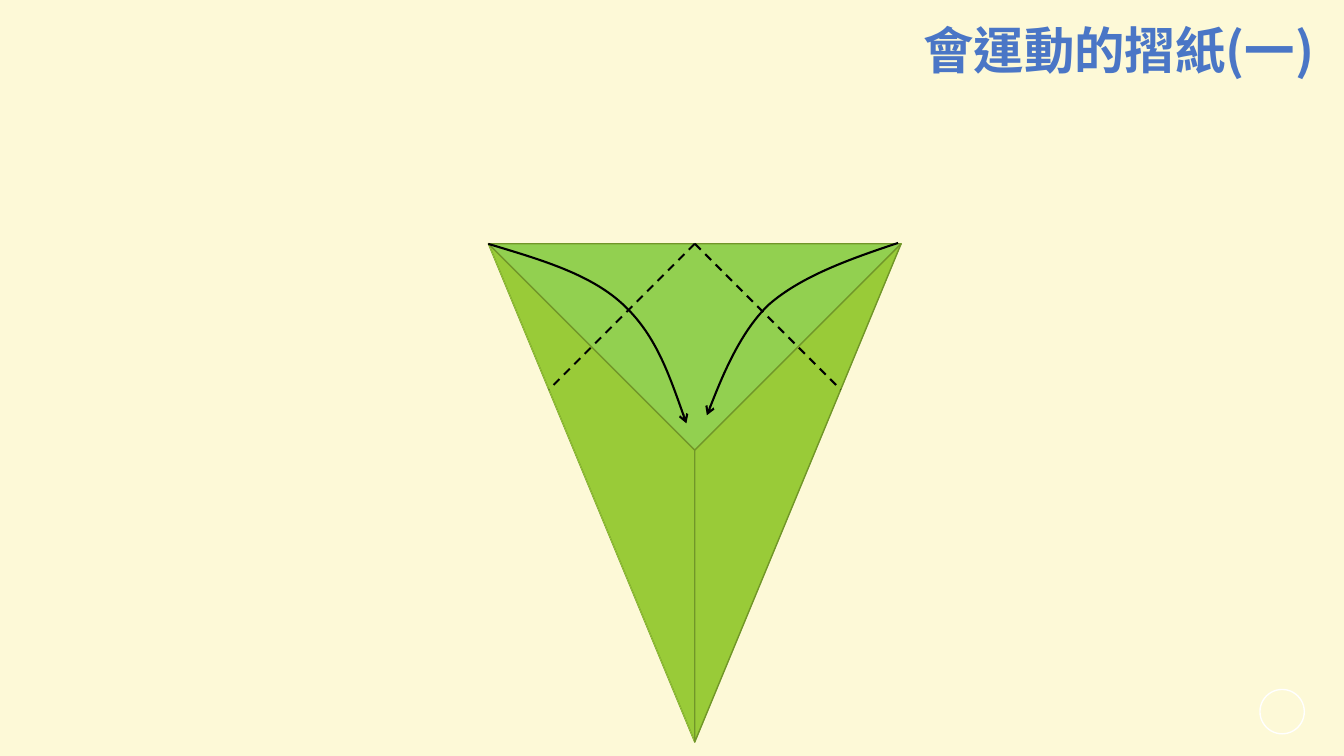
from lxml import etree
from pptx import Presentation
from pptx.dml.color import RGBColor
from pptx.enum.dml import MSO_LINE
from pptx.enum.lang import MSO_LANGUAGE_ID
from pptx.enum.shapes import MSO_CONNECTOR, MSO_SHAPE
from pptx.enum.text import MSO_ANCHOR, MSO_AUTO_SIZE, PP_ALIGN
from pptx.oxml.ns import qn
from pptx.util import Pt

STRAIGHT = MSO_CONNECTOR.STRAIGHT
OVAL = MSO_SHAPE.OVAL
DASH = MSO_LINE.DASH
LEFT = PP_ALIGN.LEFT
TOP = MSO_ANCHOR.TOP
GROW = MSO_AUTO_SIZE.SHAPE_TO_FIT_TEXT
CHINESE = MSO_LANGUAGE_ID.TRADITIONAL_CHINESE

TITLE = "會運動的摺紙(一)"
FONT = "Noto Sans CJK SC"
BACKGROUND, TITLE_BLUE, WHITE, BLACK = "FDF9D7", "4A76C6", "FFFFFF", "000000"
PAPER, FLAP, EDGE = "99CB38", "92D050", "719629"

CENTER_X, TOP_Y, BOTTOM_Y = 496.3, 174.1, 530
HALF_WIDTH = 147.4
FOLD_REACH = 104.2

MIDDLE = (CENTER_X, TOP_Y)
LEFT_CORNER = (CENTER_X - HALF_WIDTH, TOP_Y)
RIGHT_CORNER = (CENTER_X + HALF_WIDTH, TOP_Y)
TIP = (CENTER_X, BOTTOM_Y)
FLAP_TIP = (CENTER_X, TOP_Y + HALF_WIDTH)

FOLD_ARROWS = [
    [(348.8, 174.2), (384.5, 185), (420.5, 195.1), (444.2, 216.7),
     (468, 238.3), (478.8, 270), (490.3, 302.4)],
    [(641.5, 173.5), (607, 185), (572.4, 197.3), (549.4, 217.4),
     (527, 238.3), (504.9, 296.6), (504.9, 296.6)],
]


def color(value):
    return RGBColor.from_string(value)


def style_line(shape, value, width, dash=None):
    shape.line.color.rgb = color(value)
    shape.line.width = Pt(width)
    if dash:
        shape.line.dash_style = dash


def write_text(shape, text, *, size, fill, bold=False, spacing=1.0):
    frame = shape.text_frame
    frame.word_wrap = True
    frame.auto_size = GROW
    frame.vertical_anchor = TOP
    paragraph = frame.paragraphs[0]
    paragraph.alignment = LEFT
    paragraph.line_spacing = spacing
    run = paragraph.add_run()
    run.text = text
    font = run.font
    font.size = Pt(size)
    font.bold = bold
    font.name = FONT
    font.language_id = CHINESE
    font.color.rgb = color(fill)
    east_asian = etree.SubElement(run._r.get_or_add_rPr(), qn("a:ea"))
    east_asian.set("typeface", FONT)


def add_line(slide, start, end, value, width, dash=None):
    ends = [Pt(length) for length in (*start, *end)]
    line = slide.shapes.add_connector(STRAIGHT, *ends)
    style_line(line, value, width, dash)
    etree.SubElement(line._element.spPr, qn("a:effectLst"))


def add_outline(slide, points, value, width, fill=None):
    start, *others = [(Pt(x), Pt(y)) for x, y in points]
    builder = slide.shapes.build_freeform(*start)
    builder.add_line_segments(others, close=fill is not None)
    shape = builder.convert_to_shape()
    shape.shadow.inherit = False
    if fill:
        shape.fill.solid()
        shape.fill.fore_color.rgb = color(fill)
    else:
        shape.fill.background()
    style_line(shape, value, width)
    return shape


def add_fold_arrow(slide, points):
    shape = add_outline(slide, points, BLACK, 1.5)
    segments = list(shape._element.iter(qn("a:lnTo")))
    for first in range(0, len(segments), 3):
        curve = etree.Element(qn("a:cubicBezTo"))
        segments[first].addprevious(curve)
        for segment in segments[first:first + 3]:
            curve.append(segment[0])
            segment.getparent().remove(segment)
    tail = etree.SubElement(shape.line._get_or_add_ln(), qn("a:tailEnd"))
    tail.set("type", "arrow")


def add_side(slide, corner):
    add_line(slide, MIDDLE, corner, BLACK, 1.5)
    add_line(slide, corner, TIP, PAPER, 0.5)
    add_line(slide, TIP, MIDDLE, PAPER, 0.5)


def main():
    presentation = Presentation()
    presentation.slide_width = Pt(960)
    presentation.slide_height = Pt(540)
    slide = presentation.slides.add_slide(presentation.slide_layouts[5])
    slide.background.fill.solid()
    slide.background.fill.fore_color.rgb = color(BACKGROUND)

    ring = slide.shapes.add_shape(OVAL, Pt(900), Pt(492.5), Pt(31.7), Pt(31.7))
    ring.shadow.inherit = False
    ring.fill.background()
    style_line(ring, WHITE, 1)

    title = slide.shapes.title
    title.left, title.top = Pt(652.3), Pt(15.1)
    title.width, title.height = Pt(294.5), Pt(51.1)
    write_text(title, TITLE, size=36, fill=TITLE_BLUE, bold=True, spacing=0.9)

    add_outline(slide, [MIDDLE, LEFT_CORNER, TIP], EDGE, 1, PAPER)
    for corner in (LEFT_CORNER, RIGHT_CORNER):
        add_side(slide, corner)
    add_outline(slide, [MIDDLE, RIGHT_CORNER, TIP], EDGE, 1, PAPER)
    add_line(slide, LEFT_CORNER, RIGHT_CORNER, PAPER, 0.5)
    add_outline(slide, [LEFT_CORNER, RIGHT_CORNER, FLAP_TIP], EDGE, 1, FLAP)

    for side in (-1, 1):
        fold_end = (CENTER_X + side * FOLD_REACH, TOP_Y + FOLD_REACH)
        add_line(slide, MIDDLE, fold_end, BLACK, 1.5, DASH)
    for points in FOLD_ARROWS:
        add_fold_arrow(slide, points)

    presentation.save("out.pptx")


if __name__ == "__main__":
    main()
